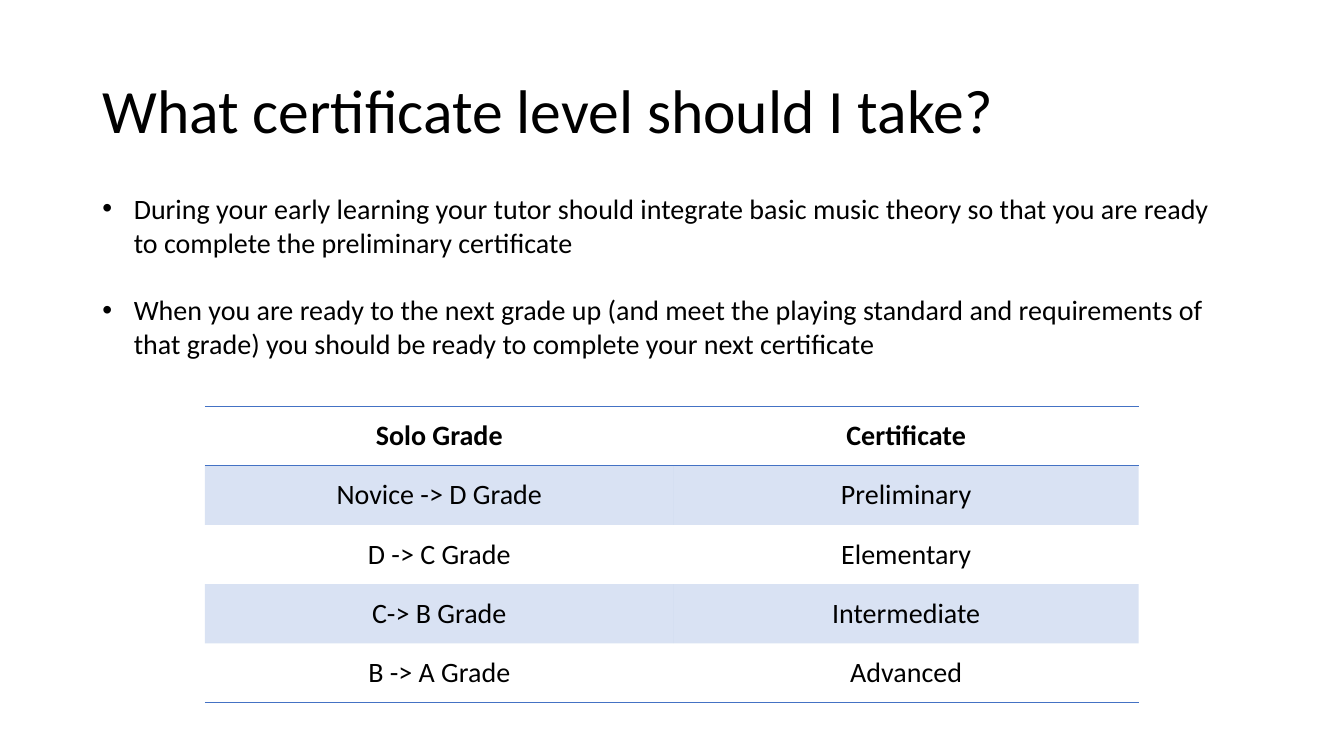
"""Build the slide that matches solo grades to theory certificates."""
from dataclasses import dataclass

from lxml import etree
from pptx import Presentation
from pptx.dml.color import RGBColor
from pptx.enum.text import MSO_ANCHOR, PP_ALIGN
from pptx.oxml.ns import qn
from pptx.util import Pt

MIDDLE, TOP = MSO_ANCHOR.MIDDLE, MSO_ANCHOR.TOP
CENTER = PP_ALIGN.CENTER
FONT = "Calibri"
COLOURS = {"text": "000000", "accent": "4472C4"}
BAND_OPACITY = 20
BULLET_INDENT = 22.5
COLUMN_WIDTHS = (335, 332)
ROW_HEIGHT = 42.35


@dataclass(frozen=True)
class TextBlock:
    left: float
    top: float
    width: float
    height: float
    size: float
    paragraphs: tuple[str, ...]
    anchor: MSO_ANCHOR = TOP
    line_spacing: float = 1.0
    gap: float = 0
    bulleted: bool = False


@dataclass(frozen=True)
class Level:
    grade: str
    certificate: str
    header: bool = False
    banded: bool = False
    edges: tuple[str, ...] = ()


TEXT_BLOCKS = (
    TextBlock(66, 28.8, 828, 104.4, 44, ("What certificate level should I take?",),
              anchor=MIDDLE, line_spacing=0.9),
    TextBlock(66, 133.2, 811.5, 128, 20, (
        "During your early learning your tutor should integrate basic music theory "
        "so that you are ready to complete the preliminary certificate",
        "When you are ready to the next grade up (and meet the playing standard and "
        "requirements of that grade) you should be ready to complete your next certificate",
    ), gap=24.4, bulleted=True),
)
LEVELS = (
    Level("Solo Grade", "Certificate", header=True, edges=("T", "B")),
    Level("Novice -> D Grade", "Preliminary", banded=True, edges=("T",)),
    Level("D -> C Grade", "Elementary"),
    Level("C-> B Grade", "Intermediate", banded=True),
    Level("B -> A Grade", "Advanced", edges=("B",)),
)


def style_font(paragraph, size: float, bold: bool = False) -> None:
    font = paragraph.font
    font.name, font.size, font.bold = FONT, Pt(size), bold
    font.color.rgb = RGBColor.from_string(COLOURS["text"])


def add_bullet(paragraph) -> None:
    properties = paragraph._p.get_or_add_pPr()
    properties.set("marL", str(Pt(BULLET_INDENT)))
    properties.set("indent", str(-Pt(BULLET_INDENT)))
    bullet_font = etree.Element(qn("a:buFont"), typeface="Arial")
    bullet = etree.Element(qn("a:buChar"), char="•")
    default_run = properties.find(qn("a:defRPr"))
    default_run.addprevious(bullet_font)
    default_run.addprevious(bullet)


def draw_text(slide, block: TextBlock) -> None:
    box = slide.shapes.add_textbox(
        Pt(block.left), Pt(block.top), Pt(block.width), Pt(block.height))
    frame = box.text_frame
    frame.word_wrap = True
    frame.vertical_anchor = block.anchor
    frame.text = "\n".join(block.paragraphs)
    for index, paragraph in enumerate(frame.paragraphs):
        paragraph.line_spacing = block.line_spacing
        paragraph.space_before = Pt(block.gap if index else 0)
        style_font(paragraph, block.size)
        if block.bulleted:
            add_bullet(paragraph)


def set_borders(cell, edges: tuple[str, ...]) -> None:
    properties = cell._tc.get_or_add_tcPr()
    for edge in "LRTB":
        border = etree.SubElement(properties, qn(f"a:ln{edge}"), w=str(Pt(1)))
        if edge in edges:
            paint = etree.SubElement(border, qn("a:solidFill"))
            etree.SubElement(paint, qn("a:srgbClr"), val=COLOURS["accent"])
        else:
            etree.SubElement(border, qn("a:noFill"))


def set_fill(cell, banded: bool) -> None:
    if not banded:
        cell.fill.background()
        return
    cell.fill.solid()
    cell.fill.fore_color.rgb = RGBColor.from_string(COLOURS["accent"])
    colour = cell._tc.tcPr.find(f"{qn('a:solidFill')}/{qn('a:srgbClr')}")
    etree.SubElement(colour, qn("a:alpha"), val=str(BAND_OPACITY * 1000))


def draw_levels(slide, levels: tuple[Level, ...]) -> None:
    table = slide.shapes.add_table(
        len(levels), len(COLUMN_WIDTHS), Pt(146.3), Pt(290.2),
        Pt(sum(COLUMN_WIDTHS)), Pt(ROW_HEIGHT * len(levels))).table
    table.first_row = table.horz_banding = False
    for column, width in zip(table.columns, COLUMN_WIDTHS):
        column.width = Pt(width)
    for row, level in zip(table.rows, levels):
        row.height = Pt(ROW_HEIGHT)
        for cell, wording in zip(row.cells, (level.grade, level.certificate)):
            cell.text = wording
            cell.vertical_anchor = MIDDLE
            paragraph = cell.text_frame.paragraphs[0]
            paragraph.alignment = CENTER
            style_font(paragraph, 20, level.header)
            set_borders(cell, level.edges)
            set_fill(cell, level.banded)


def main() -> None:
    presentation = Presentation()
    presentation.slide_width, presentation.slide_height = Pt(960), Pt(540)
    slide = presentation.slides.add_slide(presentation.slide_layouts[6])
    for block in TEXT_BLOCKS:
        draw_text(slide, block)
    draw_levels(slide, LEVELS)
    presentation.save("out.pptx")


if __name__ == "__main__":
    main()
